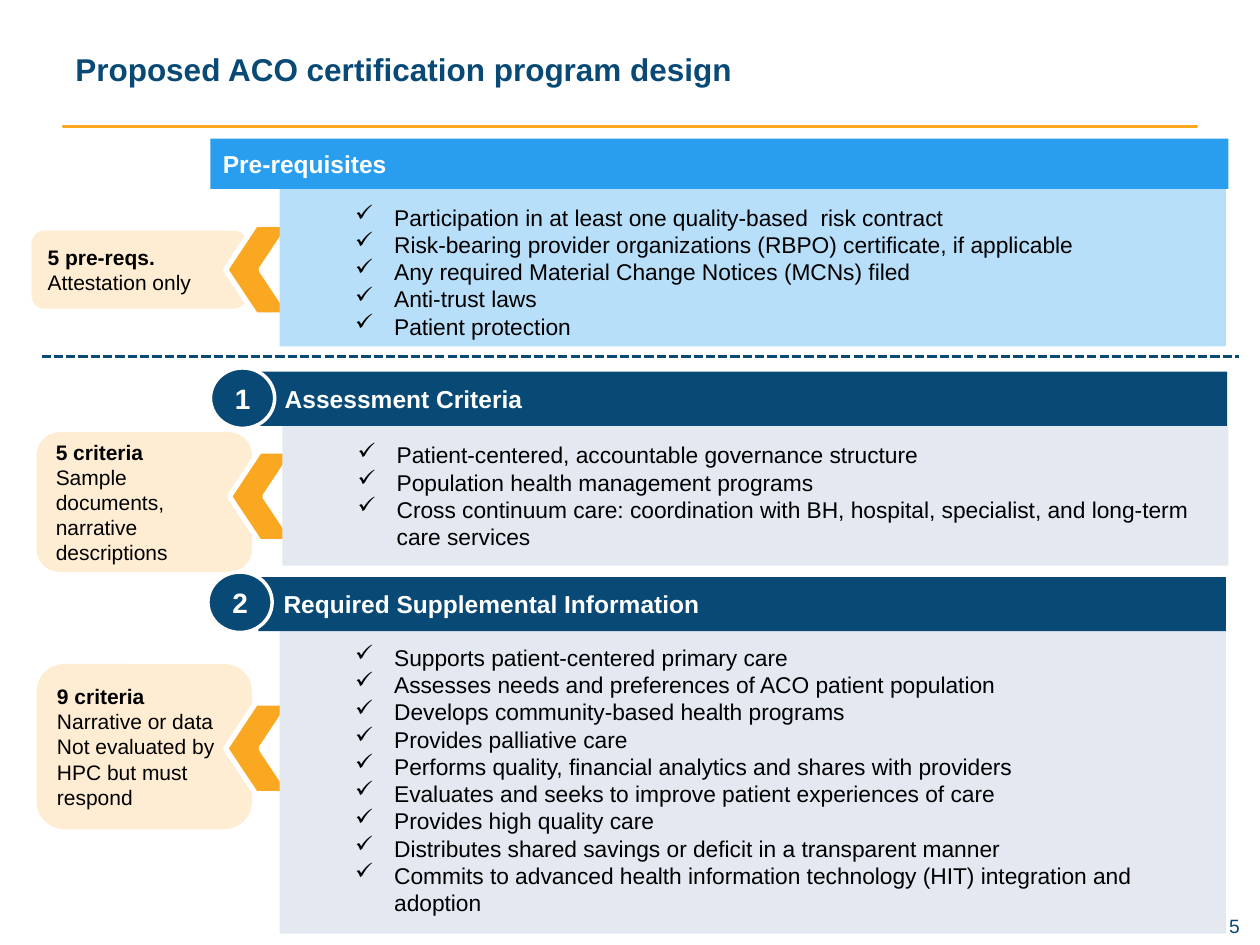
from dataclasses import dataclass

from lxml.etree import SubElement
from pptx import Presentation
from pptx.dml.color import RGBColor
from pptx.enum.dml import MSO_LINE
from pptx.enum.shapes import MSO_CONNECTOR, MSO_SHAPE
from pptx.enum.text import MSO_ANCHOR, PP_ALIGN
from pptx.oxml.ns import qn
from pptx.util import Inches, Pt


@dataclass(frozen=True)
class Theme:
    font: str = "Arial"
    navy: str = "094975"
    blue: str = "299EEF"
    sky: str = "B8DFFA"
    mist: str = "E3E8F1"
    gold: str = "FAA721"
    cream: str = "FEEDD3"
    white: str = "FFFFFF"
    black: str = "000000"
    title: int = 18
    head: int = 14
    badge: int = 16
    body: int = 13
    note: int = 12
    page: int = 11


T = Theme()


def color(code):
    return RGBColor.from_string(code)


def shape(slide, kind, box, fill, edge=None, width=1):
    item = slide.shapes.add_shape(kind, *map(Inches, box))
    item.shadow.inherit = False
    item.fill.solid()
    item.fill.fore_color.rgb = color(fill)
    if edge:
        item.line.color.rgb = color(edge)
        item.line.width = Pt(width)
    else:
        item.line.fill.background()
    return item


def frame(item, left=0.1, top=0.05, right=0.1, bottom=0.05):
    text = item.text_frame
    text.word_wrap = True
    text.vertical_anchor = MSO_ANCHOR.MIDDLE
    text.margin_left, text.margin_right = Inches(left), Inches(right)
    text.margin_top, text.margin_bottom = Inches(top), Inches(bottom)
    return text


def write(text, lines, size, ink, bold=False, align=PP_ALIGN.LEFT, pitch=None, check=False):
    """Write one paragraph per line; the first line may alone be bold."""
    for n, line in enumerate(lines):
        para = text.paragraphs[0] if n == 0 else text.add_paragraph()
        para.alignment = align
        if pitch:
            para.line_spacing = Pt(size * pitch)
        if check:
            props = para._p.get_or_add_pPr()
            props.set("marL", str(Inches(0.81)))
            props.set("indent", str(-Inches(0.31)))
            SubElement(props, qn("a:buChar")).set("char", "✓")
        run = para.add_run()
        run.text = line
        run.font.name = T.font
        run.font.size = Pt(size)
        run.font.color.rgb = color(ink)
        run.font.bold = bold is True or (bold == "first" and n == 0)


def header(slide, box):
    """Title with a rule below it."""
    x, y, w, h = box
    title = slide.shapes.add_textbox(*map(Inches, box))
    write(frame(title), ["Proposed ACO certification program design"],
          T.title, T.navy, bold=True)
    shape(slide, MSO_SHAPE.RECTANGLE, (x, y + h + 0.08, w, 0.01), T.gold, T.gold)


def divider(slide, x, y, w):
    line = slide.shapes.add_connector(
        MSO_CONNECTOR.STRAIGHT, Inches(x), Inches(y), Inches(x + w), Inches(y))
    line.line.color.rgb = color(T.navy)
    line.line.width = Pt(1.75)
    line.line.dash_style = MSO_LINE.SQUARE_DOT
    SubElement(line._element.spPr, qn("a:effectLst"))


def callout(slide, box, lines, tip):
    """Rounded note and the chevron that points to it."""
    note = shape(slide, MSO_SHAPE.ROUNDED_RECTANGLE, box, T.cream)
    write(frame(note), lines, T.note, T.black, bold="first", pitch=1.2)
    arrow = shape(slide, MSO_SHAPE.CHEVRON, (*tip, 0.52, 0.72), T.gold, T.white, 3)
    arrow.adjustments[0] = 0.459
    arrow.rotation = 180


def panel(slide, box, lines, fill, top=0.05, bottom=0.05):
    """Checklist on a plain ground."""
    item = shape(slide, MSO_SHAPE.RECTANGLE, box, fill)
    write(frame(item, top=top, bottom=bottom), lines, T.body, T.black,
          pitch=1.2, check=True)


def banner(slide, box, label, fill, left=0.1):
    item = shape(slide, MSO_SHAPE.RECTANGLE, box, fill)
    write(frame(item, left=left), [label], T.head, T.white, bold=True)


def badge(slide, x, y, label):
    item = shape(slide, MSO_SHAPE.OVAL, (x, y, 0.51, 0.48), T.navy, T.white, 2)
    write(frame(item), [label], T.badge, T.white, bold=True, align=PP_ALIGN.CENTER)


def footer(slide, box):
    item = slide.shapes.add_textbox(*map(Inches, box))
    write(frame(item, 0, 0, 0, 0), ["5"], T.page, T.navy, align=PP_ALIGN.RIGHT)


def main():
    deck = Presentation()
    deck.slide_width, deck.slide_height = Inches(10), Inches(7.5)
    slide = deck.slides.add_slide(deck.slide_layouts[6])

    header(slide, (0.5, 0.17, 9, 0.75))
    footer(slide, (7.42, 7.25, 2.42, 0.19))
    divider(slide, 0.33, 2.83, 9.5)

    # Pre-requisites
    callout(slide, (0.25, 1.83, 1.71, 0.62),
            ["5 pre-reqs.", "Attestation only"], (1.79, 1.78))
    panel(slide, (2.22, 1.33, 7.51, 1.42), [
        "Participation in at least one quality-based  risk contract",
        "Risk-bearing provider organizations (RBPO) certificate, if applicable",
        "Any required Material Change Notices (MCNs) filed",
        "Anti-trust laws",
        "Patient protection",
    ], T.sky, top=0.28)
    banner(slide, (1.67, 1.1, 8.08, 0.4), "Pre-requisites", T.blue)

    # Assessment criteria
    callout(slide, (0.29, 3.43, 1.71, 1.11),
            ["5 criteria", "Sample documents, narrative descriptions"], (1.82, 3.58))
    panel(slide, (2.24, 3.38, 7.51, 1.11), [
        "Patient-centered, accountable governance structure",
        "Population health management programs",
        "Cross continuum care: coordination with BH, hospital, specialist, "
        "and long-term care services",
    ], T.mist)
    banner(slide, (2.06, 2.95, 7.68, 0.43), "Assessment Criteria", T.navy, left=0.2)
    badge(slide, 1.67, 2.92, "1")

    # Supplemental information
    callout(slide, (0.29, 5.27, 1.71, 1.31),
            ["9 criteria", "Narrative or data",
             "Not evaluated by HPC but must respond"], (1.79, 5.58))
    panel(slide, (2.22, 4.76, 7.51, 2.65), [
        "Supports patient-centered primary care",
        "Assesses needs and preferences of ACO patient population",
        "Develops community-based health programs",
        "Provides palliative care",
        "Performs quality, financial analytics and shares with providers",
        "Evaluates and seeks to improve patient experiences of care",
        "Provides high quality care",
        "Distributes shared savings or deficit in a transparent manner",
        "Commits to advanced health information technology (HIT) integration and adoption",
    ], T.mist, top=0.48, bottom=0.27)
    banner(slide, (2.05, 4.58, 7.68, 0.43),
           "Required Supplemental Information", T.navy, left=0.2)
    badge(slide, 1.65, 4.54, "2")

    deck.save("out.pptx")


if __name__ == "__main__":
    main()
